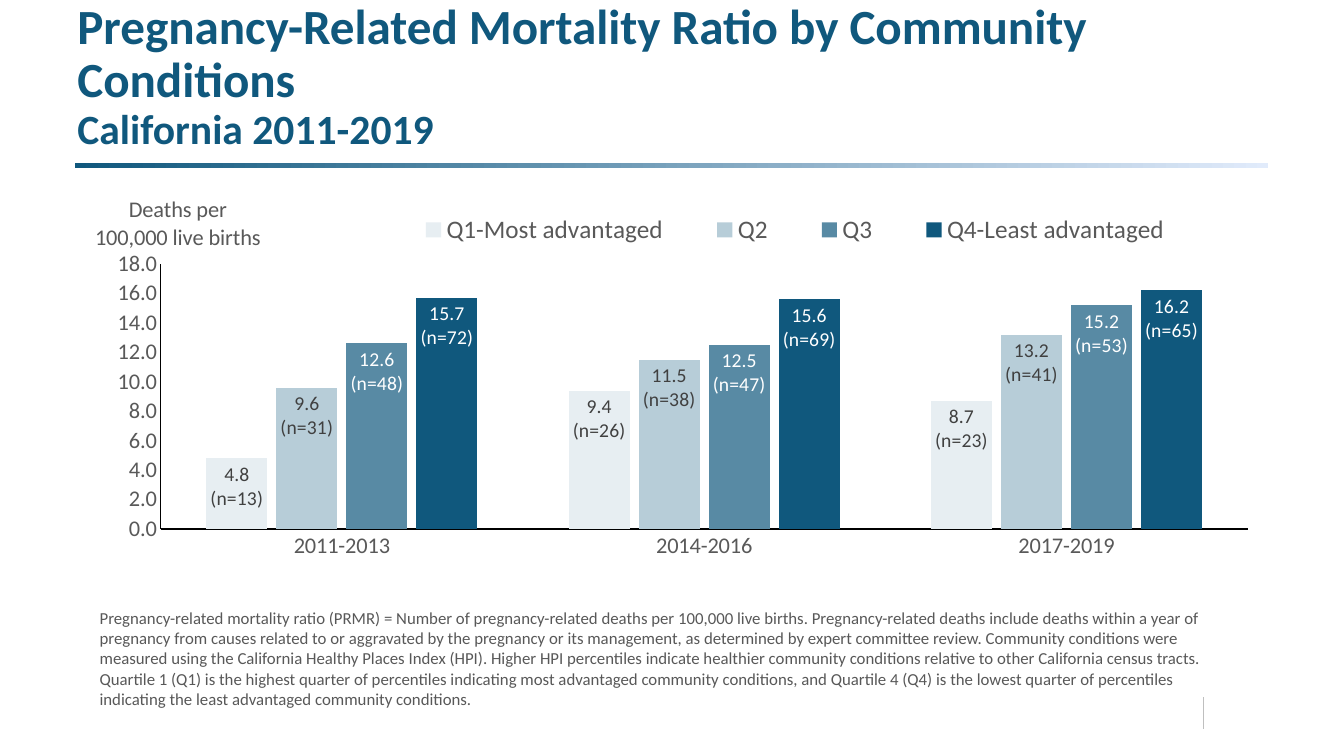
from lxml import etree
from pptx import Presentation
from pptx.chart.data import CategoryChartData
from pptx.dml.color import RGBColor
from pptx.enum.chart import XL_CHART_TYPE, XL_LABEL_POSITION, XL_LEGEND_POSITION, XL_TICK_MARK
from pptx.enum.shapes import MSO_CONNECTOR, MSO_SHAPE
from pptx.enum.text import MSO_ANCHOR
from pptx.oxml.ns import qn
from pptx.util import Pt

CLUSTERED = XL_CHART_TYPE.COLUMN_CLUSTERED
INSIDE_END = XL_LABEL_POSITION.INSIDE_END
BOTTOM = XL_LEGEND_POSITION.BOTTOM
NO_TICK = XL_TICK_MARK.NONE

FONT = "Calibri"
COLORS = {
    "navy": "10587D", "pale": "E1EBFB", "gray": "595959", "note": "585858",
    "label": "404040", "white": "FFFFFF", "black": "000000", "rule": "BFBFBF",
    "q1": "E7EEF2", "q2": "B7CDD8", "q3": "588AA4",
}

PERIODS = ["2011-2013", "2014-2016", "2017-2019"]
# name, ratios, deaths, fill, label colour
QUARTILES = [
    ("Q1-Most advantaged", [4.8, 9.4, 8.7], [13, 26, 23], "q1", "label"),
    ("Q2", [9.6, 11.5, 13.2], [31, 38, 41], "q2", "label"),
    ("Q3", [12.6, 12.5, 15.2], [48, 47, 53], "q3", "white"),
    ("Q4-Least advantaged", [15.7, 15.6, 16.2], [72, 69, 65], "navy", "white"),
]
NOTE = (
    "Pregnancy-related mortality ratio (PRMR) = Number of pregnancy-related deaths per "
    "100,000 live births. Pregnancy-related deaths include deaths within a year of pregnancy "
    "from causes related to or aggravated by the pregnancy or its management, as determined by "
    "expert committee review. Community conditions were measured using the California Healthy "
    "Places Index (HPI). Higher HPI percentiles indicate healthier community conditions relative "
    "to other California census tracts. Quartile 1 (Q1) is the highest quarter of percentiles "
    "indicating most advantaged community conditions, and Quartile 4 (Q4) is the lowest quarter "
    "of percentiles indicating the least advantaged community conditions."
)


def rgb(name):
    return RGBColor.from_string(COLORS[name])


def set_font(font, size, color, bold=False):
    font.name, font.size, font.bold = FONT, Pt(size), bold
    font.color.rgb = rgb(color)


def add_run(p, text, size, color, bold=False):
    r = p.add_run()
    r.text = text
    set_font(r.font, size, color, bold)


def add_lines(tf, lines, **fmt):
    """Write each line as its own paragraph."""
    for i, line in enumerate(lines):
        p = tf.paragraphs[0] if i == 0 else tf.add_paragraph()
        add_run(p, line, **fmt)


def add_box(s, x, y, w, h, anchor=MSO_ANCHOR.TOP):
    tf = s.shapes.add_textbox(Pt(x), Pt(y), Pt(w), Pt(h)).text_frame
    tf.word_wrap = True
    tf.vertical_anchor = anchor
    return tf


def add_title(s):
    tf = add_box(s, 48.2, 25.9, 870.5, 87.1, MSO_ANCHOR.BOTTOM)
    p = tf.paragraphs[0]
    p.line_spacing = 0.9
    add_run(p, "Pregnancy-Related Mortality Ratio by Community Conditions", 35.1, "navy", bold=True)
    p.add_line_break()
    add_run(p, "California 2011-2019", 29.7, "navy", bold=True)


def add_gradient_bar(s, x, y, w, h):
    sp = s.shapes.add_shape(MSO_SHAPE.RECTANGLE, Pt(x), Pt(y), Pt(w), Pt(h))
    sp.shadow.inherit = False
    sp.line.fill.background()
    sp.fill.gradient()
    sp.fill.gradient_angle = 0
    for stop, color, position in zip(sp.fill.gradient_stops, ("navy", "pale"), (0, 1)):
        stop.color.rgb = rgb(color)
        stop.position = position


def add_rule(s, x, top, bottom):
    line = s.shapes.add_connector(MSO_CONNECTOR.STRAIGHT, Pt(x), Pt(top), Pt(x), Pt(bottom))
    line.line.color.rgb = rgb("rule")
    line.line.width = Pt(0.5)
    etree.SubElement(line._element.spPr, qn("a:effectLst"))


def set_layout(parent, index, **values):
    """Place a chart part by fractions of the chart; index is where c:layout goes."""
    layout = parent.find(qn("c:layout"))
    if layout is None:
        layout = etree.Element(qn("c:layout"))
        parent.insert(index, layout)
    manual = etree.SubElement(layout, qn("c:manualLayout"))
    for key, value in values.items():
        etree.SubElement(manual, qn(f"c:{key}")).set("val", str(value))


def style_axis(axis):
    axis.major_tick_mark = axis.minor_tick_mark = NO_TICK
    axis.has_major_gridlines = False
    axis.format.line.color.rgb = rgb("black")
    axis.format.line.width = Pt(0.75)
    set_font(axis.tick_labels.font, 16, "gray")


def style_value_axis(axis):
    style_axis(axis)
    axis.minimum_scale, axis.maximum_scale, axis.major_unit = 0, 18, 2
    axis.tick_labels.number_format = "0.0"
    axis.tick_labels.number_format_is_linked = False
    title = axis.axis_title
    tf = title.text_frame
    add_lines(tf, ["Deaths per", "100,000 live births"], size=16, color="gray")
    body = tf._txBody.find(qn("a:bodyPr"))
    body.set("rot", "0")
    body.set("vert", "horz")
    set_layout(title._element, 1, xMode="edge", yMode="edge", x=0.007, y=0.025)


def style_series(series, ratios, deaths, fill, label_color):
    series.format.fill.solid()
    series.format.fill.fore_color.rgb = rgb(fill)
    series.invert_if_negative = False
    labels = series.data_labels
    labels.show_value = True
    labels.number_format = "0.0"
    labels.number_format_is_linked = False
    labels.position = INSIDE_END
    set_font(labels.font, 14, label_color)
    for i, (ratio, n) in enumerate(zip(ratios, deaths)):
        label = series.points[i].data_label
        add_lines(label.text_frame, [f"{ratio}", f"(n={n})"], size=14, color=label_color)
        label.position = INSIDE_END


def add_ratio_chart(s, x, y, w, h):
    data = CategoryChartData(number_format="0.0")
    data.categories = PERIODS
    for name, ratios, *_ in QUARTILES:
        data.add_series(name, ratios)
    chart = s.shapes.add_chart(CLUSTERED, Pt(x), Pt(y), Pt(w), Pt(h), data).chart
    chart.has_title = False
    set_font(chart.font, 16, "black")
    plot = chart.plots[0]
    plot.vary_by_categories = False
    plot.gap_width, plot.overlap = 150, -15
    for series, (_, *details) in zip(plot.series, QUARTILES):
        style_series(series, *details)
    style_axis(chart.category_axis)
    style_value_axis(chart.value_axis)
    chart.has_legend = True
    legend = chart.legend
    legend.position = BOTTOM
    legend.include_in_layout = False
    set_font(legend.font, 18, "gray")
    set_layout(legend._element, 1, xMode="edge", yMode="edge", x=0.25, y=0.07, w=0.7, h=0.09)
    plot_area = chart._chartSpace.chart.plotArea
    set_layout(plot_area, 0, layoutTarget="inner", xMode="edge", yMode="edge",
               x=0.065, y=0.196, w=0.917, h=0.629)


def main():
    prs = Presentation()
    prs.slide_width, prs.slide_height = Pt(960), Pt(540)
    s = prs.slides.add_slide(prs.slide_layouts[6])
    add_rule(s, 859.7, 498.2, 520.6)
    add_gradient_bar(s, 53.6, 116.6, 852.5, 3.6)
    add_title(s)
    add_ratio_chart(s, 59.8, 129.6, 846.7, 301)
    add_lines(add_box(s, 64.1, 430.6, 820.8, 79.9), [NOTE], size=12, color="note")
    prs.save("out.pptx")


if __name__ == "__main__":
    main()
